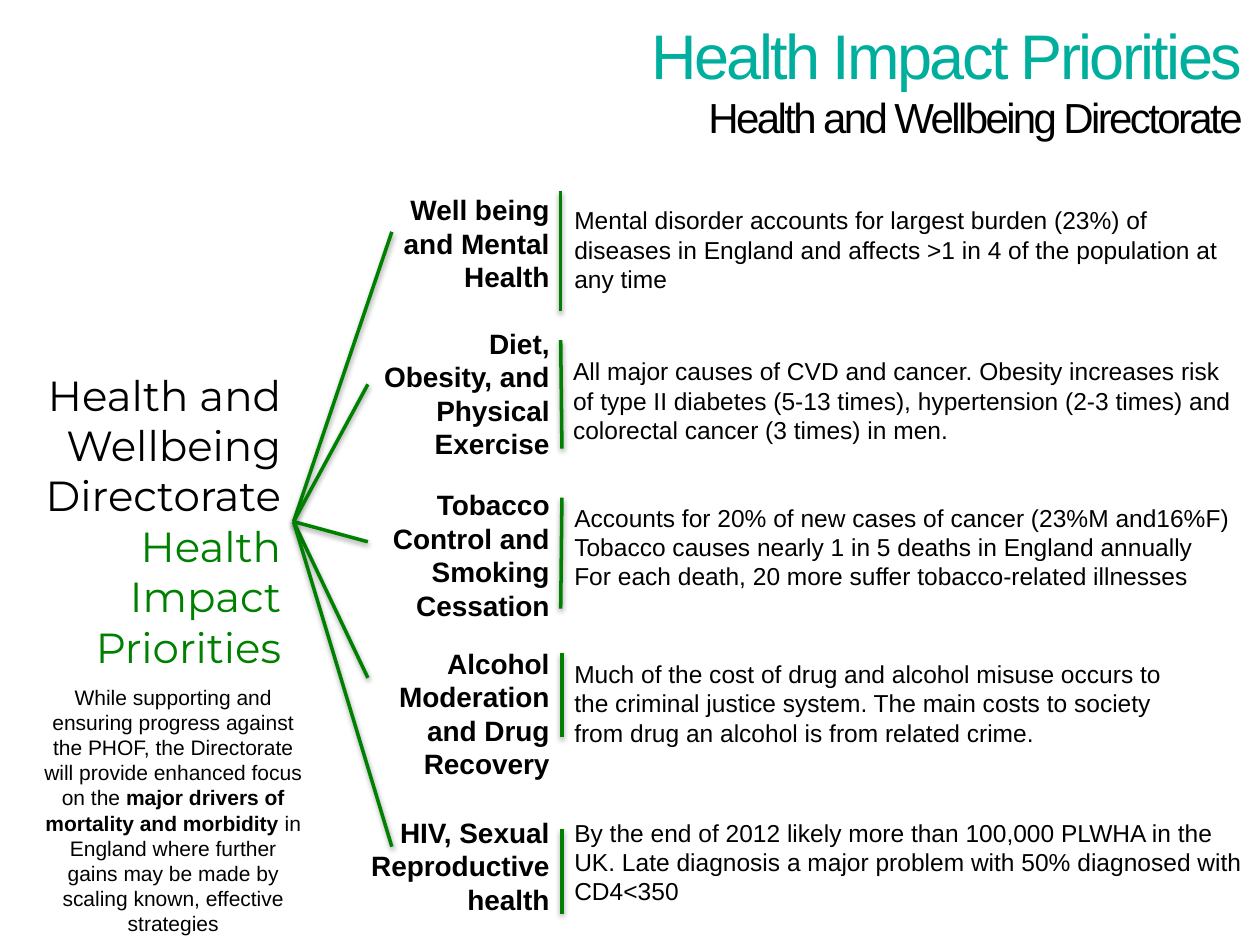
"""Build the Health Impact Priorities slide."""
from lxml.etree import fromstring
from pptx import Presentation
from pptx.dml.color import RGBColor
from pptx.enum.shapes import MSO_CONNECTOR
from pptx.enum.text import PP_ALIGN
from pptx.oxml.ns import nsdecls
from pptx.util import Inches, Pt

THEME = {
    "black": RGBColor(0, 0, 0), "green": RGBColor(0, 128, 0), "teal": RGBColor(0, 174, 158),
    "font": "Arial", "side": "Montserrat",
    "title": Pt(36), "head": Pt(24), "name": Pt(16), "fact": Pt(14), "note": Pt(12),
}
SHADE = (f'<a:effectLst {nsdecls("a")}><a:outerShdw blurRad="40000" dist="20000" dir="5400000" '
         'rotWithShape="0"><a:srgbClr val="000000"><a:alpha val="38000"/></a:srgbClr>'
         '</a:outerShdw></a:effectLst>')
RIGHT, LEFT, MID = PP_ALIGN.RIGHT, PP_ALIGN.LEFT, PP_ALIGN.CENTER

deck = Presentation()
deck.slide_width, deck.slide_height = Inches(10), Inches(7.5)
slide = deck.slides.add_slide(deck.slide_layouts[6])


def write(area, size, align, paras, face="font"):
    """Add a text box; each paragraph is a list of (text, format) runs."""
    box = slide.shapes.add_textbox(*map(Inches, area))
    frame = box.text_frame
    frame.word_wrap = True
    for num, runs in enumerate(paras):
        para = frame.paragraphs[0] if num == 0 else frame.add_paragraph()
        para.alignment = align
        for text, extra in runs:
            if text == "\n":
                para.add_line_break()
                continue
            run = para.add_run()
            run.text = text
            look = {"name": THEME[face], "size": THEME[size], "bold": False, **extra}
            tint = look.pop("tint", "black")
            for key, val in look.items():
                setattr(run.font, key, val)
            run.font.color.rgb = THEME[tint]
    return frame


def draw(start, end):
    """Add a green line with a soft shadow."""
    line = slide.shapes.add_connector(MSO_CONNECTOR.STRAIGHT, *map(Inches, start + end))
    line.line.color.rgb = THEME["green"]
    line.line.width = Pt(2)
    line._element.spPr.append(fromstring(SHADE))


title = write((3.27, 0.13, 6.59, 0.87), "title", RIGHT, [[
    ("Health Impact Priorities", {"tint": "teal"}), ("\n", {}),
    ("Health and Wellbeing Directorate", {"size": THEME["head"]})]])
for side in ("left", "right", "top", "bottom"):
    setattr(title, f"margin_{side}", 0)
for run in title.paragraphs[0].runs:
    run.font._element.set("spc", "-150")

write((0, 2.88, 2.33, 2.52), "head", RIGHT, [
    [("Health and Wellbeing Directorate", {})],
    [("Health Impact Priorities", {"tint": "green"})]], "side")

hub = (2.33, 4.14)
rows = [
    ("Well being and Mental Health", (3.03, 1.48, 1.43, 0.91), (3.11, 1.84),
     (4.45, 1.52), (4.45, 2.47), (4.46, 1.58, 5.54, 0.81),
     ["Mental disorder accounts for largest burden (23%) of diseases in England "
      "and affects >1 in 4 of the population at any time"]),
    ("Diet, Obesity, and Physical Exercise", (2.87, 2.54, 1.59, 1.18), (2.92, 3.05),
     (4.45, 2.7), (4.46, 3.56), (4.45, 2.78, 5.54, 0.81),
     ["All major causes of CVD and cancer. Obesity increases risk of type II diabetes "
      "(5-13 times), hypertension (2-3 times) and colorectal cancer (3 times) in men."]),
    ("Tobacco Control and Smoking Cessation", (2.87, 3.82, 1.59, 1.18), (2.92, 4.3),
     (4.46, 3.95), (4.45, 4.83), (4.46, 3.94, 5.54, 0.81),
     ["Accounts for 20% of new cases of cancer (23%M and16%F)",
      "Tobacco causes nearly 1 in 5 deaths in England annually",
      "For each death, 20 more suffer tobacco-related illnesses"]),
    ("Alcohol Moderation and Drug Recovery", (2.95, 5.08, 1.51, 1.18), (2.92, 5.38),
     (4.46, 5.18), (4.46, 5.85), (4.46, 5.18, 5, 0.81),
     ["Much of the cost of drug and alcohol misuse occurs to the criminal justice system. "
      "The main costs to society from drug an alcohol is from related crime."]),
    ("HIV, Sexual Reproductive health", (2.75, 6.42, 1.71, 0.91), (3.11, 6.72),
     (4.46, 6.58), (4.46, 7.25), (4.46, 6.44, 5.54, 0.81),
     ["By the end of 2012 likely more than 100,000 PLWHA in the UK. Late diagnosis "
      "a major problem with 50% diagnosed with CD4<350"]),
]
for name, area, tip, top, foot, room, facts in rows:
    draw(top, foot)
    write(area, "name", RIGHT, [[(name, {"bold": True})]])
    draw(hub, tip)
    write(room, "fact", LEFT, [[(fact, {})] for fact in facts])

note = write((0.25, 5.38, 2.25, 2.12), "note", MID, [[
    ("While supporting and ensuring progress against the PHOF, the Directorate "
     "will provide enhanced focus on the ", {}),
    ("major drivers of mortality and morbidity ", {"bold": True}),
    ("in England where further gains may be made by scaling known, effective strategies", {})]])
note.paragraphs[0].space_after = Pt(6)

deck.save("out.pptx")
